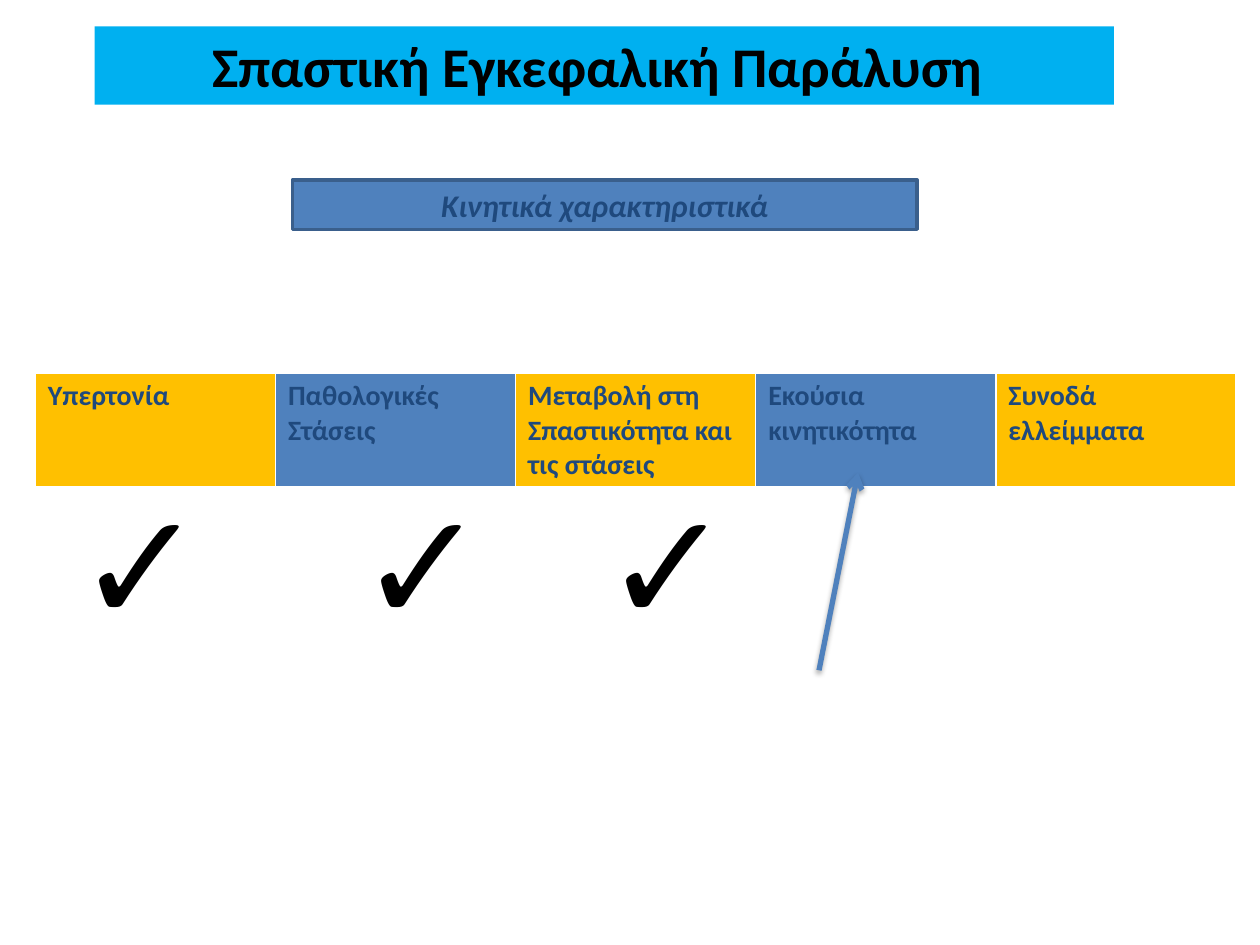
from lxml import etree
from pptx import Presentation
from pptx.dml.color import RGBColor
from pptx.enum import shapes, text
from pptx.oxml import parse_xml
from pptx.util import Inches, Pt

NS = "http://schemas.openxmlformats.org/drawingml/2006/main"
NAVY, BLUE, AMBER = "1F497D", "4F81BD", "FFC000"


def rgb(value):
    return RGBColor.from_string(value)


def write(frame, words, size, color="000000", bold=False, italic=False, align=None):
    frame.word_wrap = True
    paragraph = frame.paragraphs[0]
    paragraph.alignment = align
    run = paragraph.add_run()
    run.text = words
    run.font.name, run.font.size = "Calibri", Pt(size)
    run.font.bold, run.font.italic = bold, italic
    run.font.color.rgb = rgb(color)


prs = Presentation()
prs.slide_width, prs.slide_height = Inches(10), Inches(7.5)
slide = prs.slides.add_slide(prs.slide_layouts[5])

# Title band
title = slide.shapes.title
title.left, title.top = Inches(0.75), Inches(0.21)
title.width, title.height = Inches(8.09), Inches(0.62)
title.fill.solid()
title.fill.fore_color.rgb = rgb("00B0F0")
title.text_frame.vertical_anchor = text.MSO_ANCHOR.MIDDLE
write(title.text_frame, "Σπαστική Εγκεφαλική Παράλυση ", 32, bold=True,
      align=text.PP_ALIGN.CENTER)

# Table of motor characteristics
headings = ["Υπερτονία", "Παθολογικές Στάσεις",
            "Μεταβολή στη Σπαστικότητα και τις στάσεις",
            "Εκούσια κινητικότητα", "Συνοδά ελλείμματα"]
features = slide.shapes.add_table(1, len(headings), Inches(0.28), Inches(2.96),
                                  Inches(9.53), Inches(0.9)).table
for i, heading in enumerate(headings):
    cell = features.cell(0, i)
    write(cell.text_frame, heading, 16, NAVY, bold=True)
    for side, width in (("L", 1), ("R", 1), ("T", 1), ("B", 3)):
        cell._tc.get_or_add_tcPr().append(parse_xml(
            f'<a:ln{side} xmlns:a="{NS}" w="{Pt(width)}"><a:solidFill>'
            f'<a:srgbClr val="FFFFFF"/></a:solidFill></a:ln{side}>'))
    cell.fill.solid()
    cell.fill.fore_color.rgb = rgb(BLUE if i % 2 else AMBER)

# Subtitle box
subtitle = slide.shapes.add_shape(shapes.MSO_SHAPE.RECTANGLE, Inches(2.32), Inches(1.43),
                                  Inches(4.96), Inches(0.39))
subtitle.shadow.inherit = False
subtitle.fill.solid()
subtitle.fill.fore_color.rgb = rgb(BLUE)
subtitle.line.color.rgb = rgb("3A5F8C")
subtitle.line.width = Pt(2)
subtitle.text_frame.vertical_anchor = text.MSO_ANCHOR.MIDDLE
write(subtitle.text_frame, "Κινητικά χαρακτηριστικά", 18, NAVY, bold=True, italic=True,
      align=text.PP_ALIGN.CENTER)

# Check marks under the first three columns
for left in (0.51, 2.75, 4.69):
    check = slide.shapes.add_textbox(Inches(left), Inches(3.67), Inches(1.02), Inches(1.58))
    write(check.text_frame, "✓", 88)
    check.text_frame.auto_size = text.MSO_AUTO_SIZE.SHAPE_TO_FIT_TEXT

# Arrow to voluntary movement, with a soft shadow
arrow = slide.shapes.add_connector(shapes.MSO_CONNECTOR.STRAIGHT, Inches(6.5), Inches(5.32),
                                   Inches(6.81), Inches(3.75))
arrow.line.color.rgb = rgb(BLUE)
arrow.line.width = Pt(3)
etree.SubElement(arrow.line._get_or_add_ln(), f"{{{NS}}}tailEnd", type="arrow")
arrow._element.spPr.append(parse_xml(
    f'<a:effectLst xmlns:a="{NS}"><a:outerShdw blurRad="{Pt(3.1)}" dist="{Pt(1.8)}" '
    'dir="5400000" rotWithShape="0"><a:srgbClr val="000000"><a:alpha val="35000"/>'
    '</a:srgbClr></a:outerShdw></a:effectLst>'))

prs.save("out.pptx")
